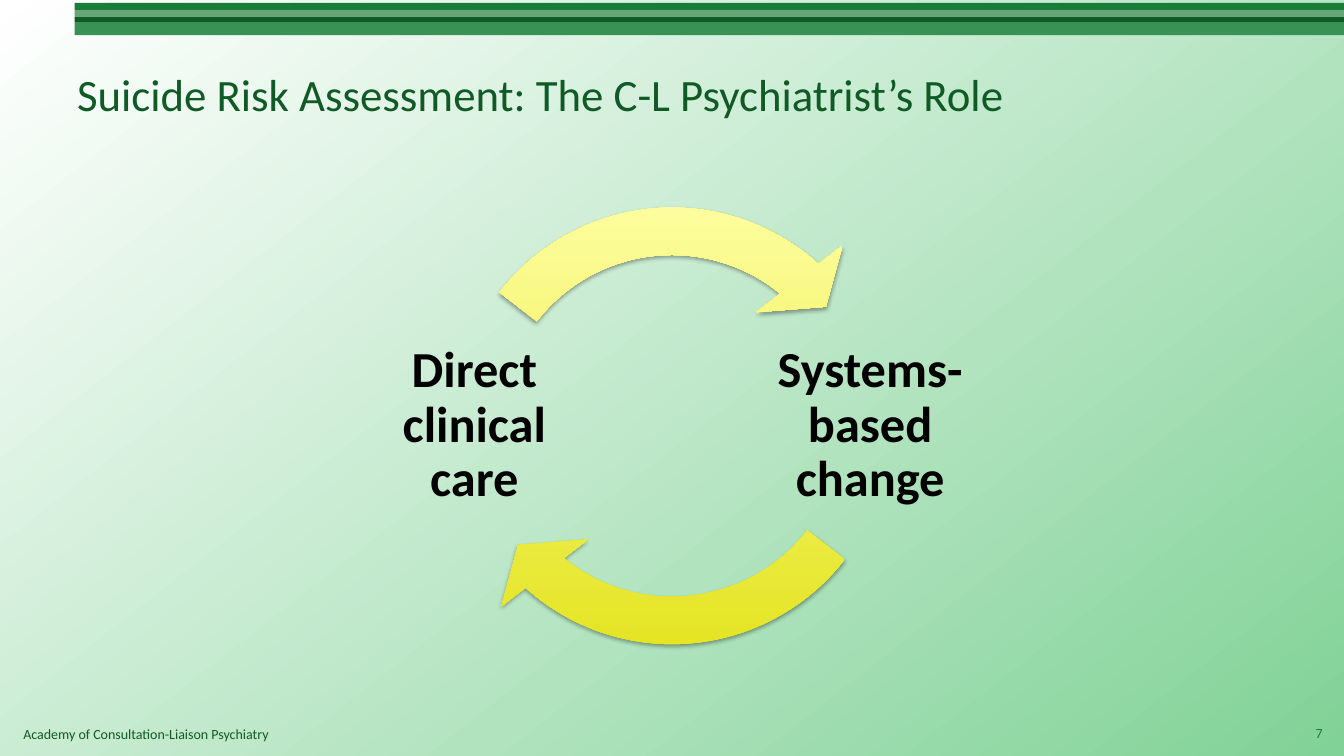
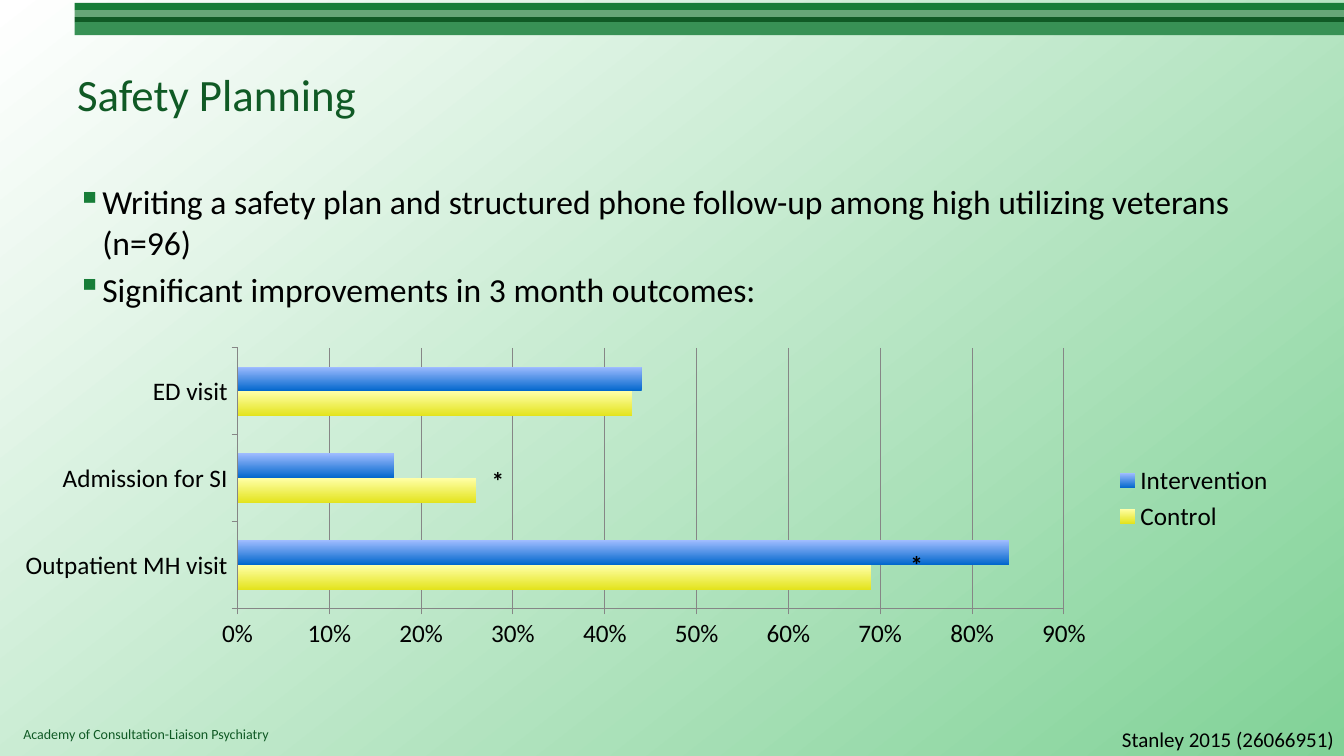
from dataclasses import dataclass

from lxml.etree import SubElement
from pptx import Presentation
from pptx.chart.data import CategoryChartData
from pptx.dml.color import RGBColor
from pptx.enum.chart import XL_CHART_TYPE as ChartType
from pptx.enum.chart import XL_LEGEND_POSITION as LegendPosition
from pptx.enum.chart import XL_TICK_MARK as TickMark
from pptx.enum.shapes import MSO_SHAPE as Preset
from pptx.enum.text import MSO_ANCHOR as Anchor
from pptx.enum.text import PP_ALIGN as Align
from pptx.oxml.ns import qn
from pptx.util import Inches, Pt


@dataclass(frozen=True)
class Theme:
    font: str = "Calibri"
    dark_green: str = "105A25"
    green: str = "177D38"
    sage: str = "66A677"
    mid_green: str = "389155"
    black: str = "000000"
    grid_line: str = "868686"
    backdrop: tuple = ("FFFFFF", "81D297")
    yellow: tuple = ("E3E31C", "FFFFA7")
    blue: tuple = ("0066CC", "9FBCFF")
    title: float = 32
    label: float = 36
    body: float = 24
    chart: float = 18
    citation: float = 15
    footer: float = 10


theme = Theme()
rgb = RGBColor.from_string

presentation = Presentation()
presentation.slide_width = Inches(13.33)
presentation.slide_height = Inches(7.5)
COLUMNS, ROWS = 20, 30
column = presentation.slide_width / COLUMNS
row = presentation.slide_height / ROWS


def paint_gradient(fill, colors, angle):
    """Blend two colours; the angle runs counter-clockwise in degrees."""
    fill.gradient()
    fill.gradient_angle = angle
    for stop, color in zip(fill.gradient_stops, colors):
        stop.color.rgb = rgb(color)


def write_text(slide, text, left, top, width, height, size, color=theme.black,
               bold=False, align=Align.LEFT, anchor=Anchor.TOP, inset=None,
               line_spacing=None, bullet=None):
    """Place text on the grid, one paragraph per line of text."""
    box = slide.shapes.add_textbox(round(left * column), round(top * row),
                                   round(width * column), round(height * row))
    frame = box.text_frame
    frame.word_wrap = True
    frame.vertical_anchor = anchor
    if inset is not None:
        frame.margin_left = frame.margin_right = Inches(inset)
    for number, line in enumerate(text.split("\n")):
        paragraph = frame.add_paragraph() if number else frame.paragraphs[0]
        if bullet:
            properties = paragraph._p.get_or_add_pPr()
            properties.set("marL", str(Inches(0.25)))
            properties.set("indent", str(-Inches(0.25)))
            bullet_color = SubElement(properties, qn("a:buClr"))
            SubElement(bullet_color, qn("a:srgbClr"), val=theme.green)
            SubElement(properties, qn("a:buChar"), char=bullet)
        paragraph.alignment = align
        if line_spacing:
            paragraph.line_spacing = line_spacing
        if number:
            paragraph.space_before = Pt(0.2 * size)
        run = paragraph.add_run()
        run.text = line
        run.font.name = theme.font
        run.font.size = Pt(size)
        run.font.bold = bold
        run.font.color.rgb = rgb(color)


# Shared look
paint_gradient(presentation.slide_master.background.fill, theme.backdrop, 308)
bands = [(theme.green, 0.07), (theme.sage, 0.07),
         (theme.dark_green, 0.05), (theme.mid_green, 0.13)]
titles = ["Suicide Risk Assessment: The C-L Psychiatrist’s Role", "Safety Planning"]
for title in titles:
    slide = presentation.slides.add_slide(presentation.slide_layouts[6])
    band_left, band_top = Inches(0.74), Inches(0.03)
    for color, thickness in bands:
        band = slide.shapes.add_shape(
            Preset.RECTANGLE, band_left, band_top,
            presentation.slide_width - band_left, Inches(thickness))
        band.shadow.inherit = False
        band.fill.solid()
        band.fill.fore_color.rgb = rgb(color)
        band.line.fill.background()
        band_top += Inches(thickness)
    write_text(slide, "Academy of Consultation-Liaison Psychiatry", 0.2, 28.6, 14, 1,
               size=theme.footer, color=theme.dark_green)
    write_text(slide, title, 1, 1.2, 18, 5, size=theme.title,
               color=theme.dark_green, anchor=Anchor.MIDDLE)

role_slide, planning_slide = presentation.slides

# Cycle of the two roles
write_text(role_slide, "7", 19.03, 28.3, 0.8, 1.6, size=theme.footer,
           color=theme.green, align=Align.RIGHT, anchor=Anchor.MIDDLE)
for text, left in [("Systems-based change", 11.14), ("Direct clinical care", 5.25)]:
    write_text(role_slide, text, left, 12.08, 3.62, 9.64, size=theme.label, bold=True,
               align=Align.CENTER, anchor=Anchor.MIDDLE, inset=0.05, line_spacing=0.9)

cycle_size = Inches(4.95)
HALF_TURN = 108  # 180 degrees in adjustment units
for turn in (0, HALF_TURN):
    arrow = role_slide.shapes.add_shape(
        Preset.CIRCULAR_ARROW, (presentation.slide_width - cycle_size) // 2,
        round(7 * row), cycle_size, cycle_size)
    for index, value in enumerate([0.095, 6.85, 78.51 + turn, 22.64 + turn, 0.11]):
        arrow.adjustments[index] = value
    paint_gradient(arrow.fill, theme.yellow, 90)
    arrow.line.fill.background()
    arrow.shadow.inherit = False
    effects = arrow._element.spPr.find(qn("a:effectLst"))
    shadow = SubElement(effects, qn("a:outerShdw"), blurRad=str(Pt(3.1)),
                        dist=str(Pt(1.8)), dir="5400000", rotWithShape="0")
    shadow_color = SubElement(shadow, qn("a:srgbClr"), val=theme.black)
    SubElement(shadow_color, qn("a:alpha"), val="35000")

# Safety plan outcomes
write_text(planning_slide,
           "Writing a safety plan and structured phone follow-up among high utilizing"
           " veterans (n=96)\nSignificant improvements in 3 month outcomes:",
           1, 7, 18, 6.5, size=theme.body, bullet="▪")
write_text(planning_slide, "Stanley 2015 (26066951)", 14, 28.64, 6, 1.36,
           size=theme.citation, align=Align.RIGHT)

outcomes = CategoryChartData(number_format="0%")
outcomes.categories = ["Outpatient MH visit", "Admission for SI", "ED visit"]
outcomes.add_series("Control", [0.69, 0.26, 0.43])
outcomes.add_series("Intervention", [0.84, 0.17, 0.44])
chart = planning_slide.shapes.add_chart(
    ChartType.BAR_CLUSTERED, 0, round(13.56 * row),
    round(19.11 * column), round(12.44 * row), outcomes).chart
chart.font.name = theme.font
chart.font.size = Pt(theme.chart)
chart.font.color.rgb = rgb(theme.black)
chart.has_title = False
chart.has_legend = True
chart.legend.position = LegendPosition.RIGHT
chart.legend.include_in_layout = False

plot = chart.plots[0]
plot.gap_width = 150
plot.overlap = 0
plot.vary_by_categories = False
for series, colors in zip(plot.series, [theme.yellow, theme.blue]):
    paint_gradient(series.format.fill, colors, 90)

value_axis = chart.value_axis
value_axis.minimum_scale, value_axis.maximum_scale = 0, 0.9
value_axis.major_unit = 0.1
value_axis.has_major_gridlines = True
value_axis.tick_labels.number_format = "0%"
value_axis.tick_labels.number_format_is_linked = False
for axis in (value_axis, chart.category_axis):
    axis.major_tick_mark = TickMark.OUTSIDE
    axis.format.line.color.rgb = rgb(theme.grid_line)
value_axis.major_gridlines.format.line.color.rgb = rgb(theme.grid_line)

for left, top in [(7.17, 18.28), (13.4, 21.6)]:
    write_text(planning_slide, "*", left, top, 0.51, 1.6, size=theme.chart, bold=True)

presentation.save("out.pptx")
